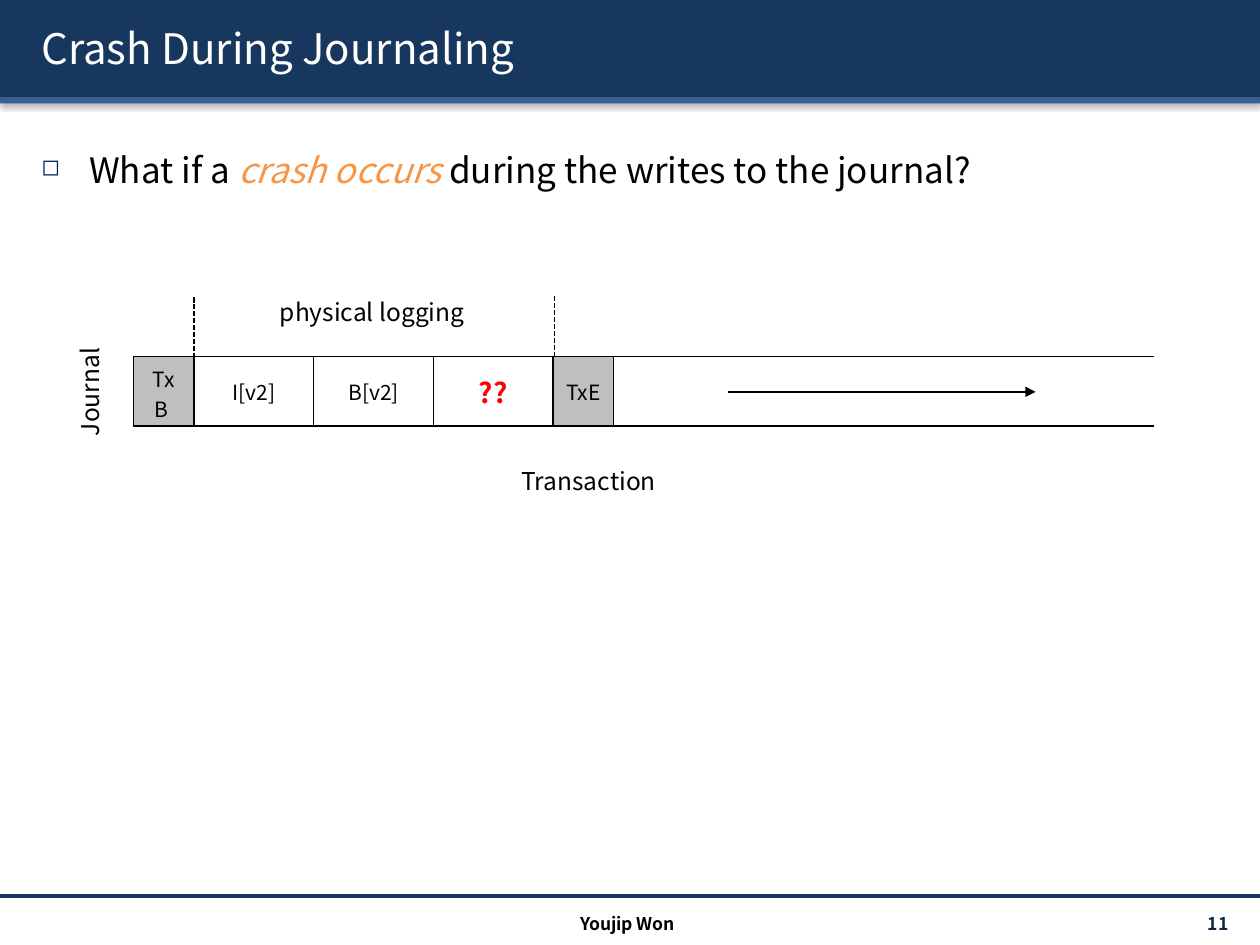
from dataclasses import dataclass
from typing import Any

from lxml import etree
from pptx import Presentation
from pptx.dml.color import RGBColor
from pptx.enum.dml import MSO_LINE_DASH_STYLE as Dash
from pptx.enum.shapes import MSO_CONNECTOR as Connector, MSO_SHAPE as Shape
from pptx.enum.text import MSO_ANCHOR as Anchor, PP_ALIGN as Align
from pptx.oxml.ns import qn
from pptx.util import Inches, Pt


@dataclass(frozen=True)
class Theme:
    font: str = "Noto Sans CJK KR"
    navy: str = "17375E"
    blue: str = "376092"
    bullet: str = "002060"
    page: str = "0F243E"
    orange: str = "F79646"
    red: str = "FF0000"
    gray: str = "BFBFBF"
    white: str = "FFFFFF"
    black: str = "000000"
    title: int = 24
    body: int = 20
    alert: int = 16
    label: int = 14
    cell: int = 12
    footer: int = 10


THEME = Theme()


@dataclass(frozen=True)
class Run:
    text: str
    size: int
    color: str = THEME.black
    bold: bool = False
    italic: bool = False


@dataclass(frozen=True)
class TextBox:
    box: tuple[float, float, float, float]
    runs: tuple[Run, ...]
    align: Align = Align.LEFT
    anchor: Anchor = Anchor.TOP
    rotation: float = 0


@dataclass(frozen=True)
class Line:
    start: tuple[float, float]
    end: tuple[float, float]
    color: str = THEME.black
    width: float = 1
    dash: Dash | None = None
    arrow: bool = False


@dataclass(frozen=True)
class Block:
    width: float
    run: Run | None
    fill: str = THEME.white
    open_right: bool = False


TITLE = TextBox((0.23, 0.06, 9.61, 0.64), (Run("Crash During Journaling", THEME.title, THEME.white),),
                anchor=Anchor.MIDDLE)
QUESTION = TextBox((0.23, 0.96, 9.61, 6.02), (
    Run("What if a ", THEME.body),
    Run("crash occurs", THEME.body, THEME.orange, italic=True),
    Run(" during the writes to the journal?", THEME.body),
))
LABELS = (
    TextBox((8.71, 7.21, 1.17, 0.24), (Run("11 ", THEME.footer, THEME.page, True),), Align.RIGHT, Anchor.MIDDLE),
    TextBox((3.32, 7.2, 3.32, 0.24), (Run("Youjip Won", THEME.footer, bold=True),), Align.CENTER),
    TextBox((0.25, 2.94, 0.93, 0.34), (Run("Journal", THEME.label),), Align.CENTER, rotation=270),
    TextBox((4.04, 3.65, 1.43, 0.34), (Run("Transaction", THEME.label),)),
    TextBox((2.09, 2.31, 1.73, 0.34), (Run("physical logging", THEME.label),), Align.CENTER),
)
JOURNAL = (
    Block(0.48, Run("TxB ", THEME.cell), THEME.gray),
    Block(0.95, Run("I[v2]", THEME.cell)),
    Block(0.95, Run("B[v2]", THEME.cell)),
    Block(0.95, Run("??", THEME.alert, THEME.red, True)),
    Block(0.48, Run("TxE", THEME.cell), THEME.gray),
    Block(4.29, None, open_right=True),
)
LINES = (
    Line((0, 7.11), (10, 7.11), THEME.navy, 2),
    Line((5.78, 3.11), (8.22, 3.11), arrow=True),
    Line((1.54, 2.36), (1.54, 2.86), dash=Dash.SQUARE_DOT),
    Line((4.4, 2.35), (4.4, 2.84), dash=Dash.SQUARE_DOT),
)


def add_element(parent: Any, tag: str, **attributes: str) -> Any:
    """Append a DrawingML child element."""
    return etree.SubElement(parent, qn(f"a:{tag}"), attributes)


def add_color(parent: Any, color: str) -> Any:
    """Append an RGB colour element."""
    return add_element(parent, "srgbClr", val=color)


def add_shadow(effects: Any, blur: float, distance: float, angle: int, alpha: int) -> None:
    """Append a black outer shadow to an effect list."""
    shadow = add_element(effects, "outerShdw", blurRad=str(Pt(blur)), dist=str(Pt(distance)),
                         dir=str(angle * 60000), algn="tl", rotWithShape="0")
    add_element(add_color(shadow, THEME.black), "alpha", val=str(alpha * 1000))


def add_run(paragraph: Any, run: Run) -> Any:
    """Write one formatted run."""
    text_run = paragraph.add_run()
    text_run.text = run.text
    formats = {"name": THEME.font, "size": Pt(run.size), "bold": run.bold, "italic": run.italic}
    for name, value in formats.items():
        setattr(text_run.font, name, value)
    text_run.font.color.rgb = RGBColor.from_string(run.color)
    return text_run


def add_text(slide: Any, text_box: TextBox) -> Any:
    """Draw a text box and return its paragraph."""
    shape = slide.shapes.add_textbox(*map(Inches, text_box.box))
    shape.rotation = text_box.rotation
    frame = shape.text_frame
    for name, value in {"word_wrap": True, "vertical_anchor": text_box.anchor}.items():
        setattr(frame, name, value)
    paragraph = frame.paragraphs[0]
    paragraph.alignment = text_box.align
    for run in text_box.runs:
        add_run(paragraph, run)
    return paragraph


def add_band(slide: Any, top: float, height: float, color: str) -> None:
    """Draw a full-width header band."""
    shape = slide.shapes.add_shape(Shape.RECTANGLE, 0, Inches(top), Inches(10), Inches(height))
    shape.shadow.inherit = False
    shape.fill.solid()
    shape.fill.fore_color.rgb = RGBColor.from_string(color)
    shape.line.fill.background()
    add_shadow(shape._element.spPr.find(qn("a:effectLst")), 3.1, 1.6, 90, 38)


def add_line(slide: Any, line: Line) -> None:
    """Draw a straight line, dashed or arrowed as described."""
    connector = slide.shapes.add_connector(Connector.STRAIGHT, *map(Inches, line.start + line.end))
    connector.line.color.rgb = RGBColor.from_string(line.color)
    for name, value in {"width": Pt(line.width), "dash_style": line.dash}.items():
        setattr(connector.line, name, value)
    if line.arrow:
        add_element(connector.line._get_or_add_ln(), "tailEnd", type="triangle")
    add_element(connector._element.spPr, "effectLst")


def add_journal(slide: Any, blocks: tuple[Block, ...]) -> None:
    """Draw the journal as a one-row table."""
    width = sum(block.width for block in blocks)
    table = slide.shapes.add_table(1, len(blocks), *map(Inches, (1.06, 2.83, width, 0.55))).table
    for name in ("first_row", "horz_banding"):
        setattr(table, name, False)
    for index, block in enumerate(blocks):
        table.columns[index].width = Inches(block.width)
        cell = table.cell(0, index)
        properties = cell._tc.get_or_add_tcPr()
        for side in "LRTB":
            border = add_element(properties, f"ln{side}", w=str(Pt(1)))
            if side == "R" and block.open_right:
                add_element(border, "noFill")
            else:
                add_color(add_element(border, "solidFill"), THEME.black)
        cell.fill.solid()
        cell.fill.fore_color.rgb = RGBColor.from_string(block.fill)
        cell.vertical_anchor = Anchor.MIDDLE
        if block.run:
            paragraph = cell.text_frame.paragraphs[0]
            paragraph.alignment = Align.CENTER
            add_run(paragraph, block.run)


def main() -> None:
    """Build and save the slide."""
    presentation = Presentation()
    presentation.slide_width, presentation.slide_height = Inches(10), Inches(7.5)
    slide = presentation.slides.add_slide(presentation.slide_layouts[6])
    add_band(slide, 0, 0.77, THEME.navy)
    add_band(slide, 0.77, 0.05, THEME.blue)
    title = add_text(slide, TITLE)
    add_shadow(add_element(title.runs[0].font._element, "effectLst"), 2, 2, 45, 100)
    title_properties = title.runs[0].font._element
    title_properties.insert(1, title_properties.find(qn("a:effectLst")))
    question = add_text(slide, QUESTION)
    question.line_spacing = 1.5
    properties = question._p.get_or_add_pPr()
    for name, value in {"marL": 0.38, "indent": -0.38}.items():
        properties.set(name, str(Inches(value)))
    add_color(add_element(properties, "buClr"), THEME.bullet)
    add_element(properties, "buSzPct", val="65000")
    add_element(properties, "buChar", char="◻")
    add_journal(slide, JOURNAL)
    for line in LINES:
        add_line(slide, line)
    for label in LABELS:
        add_text(slide, label)
    presentation.save("out.pptx")


if __name__ == "__main__":
    main()
